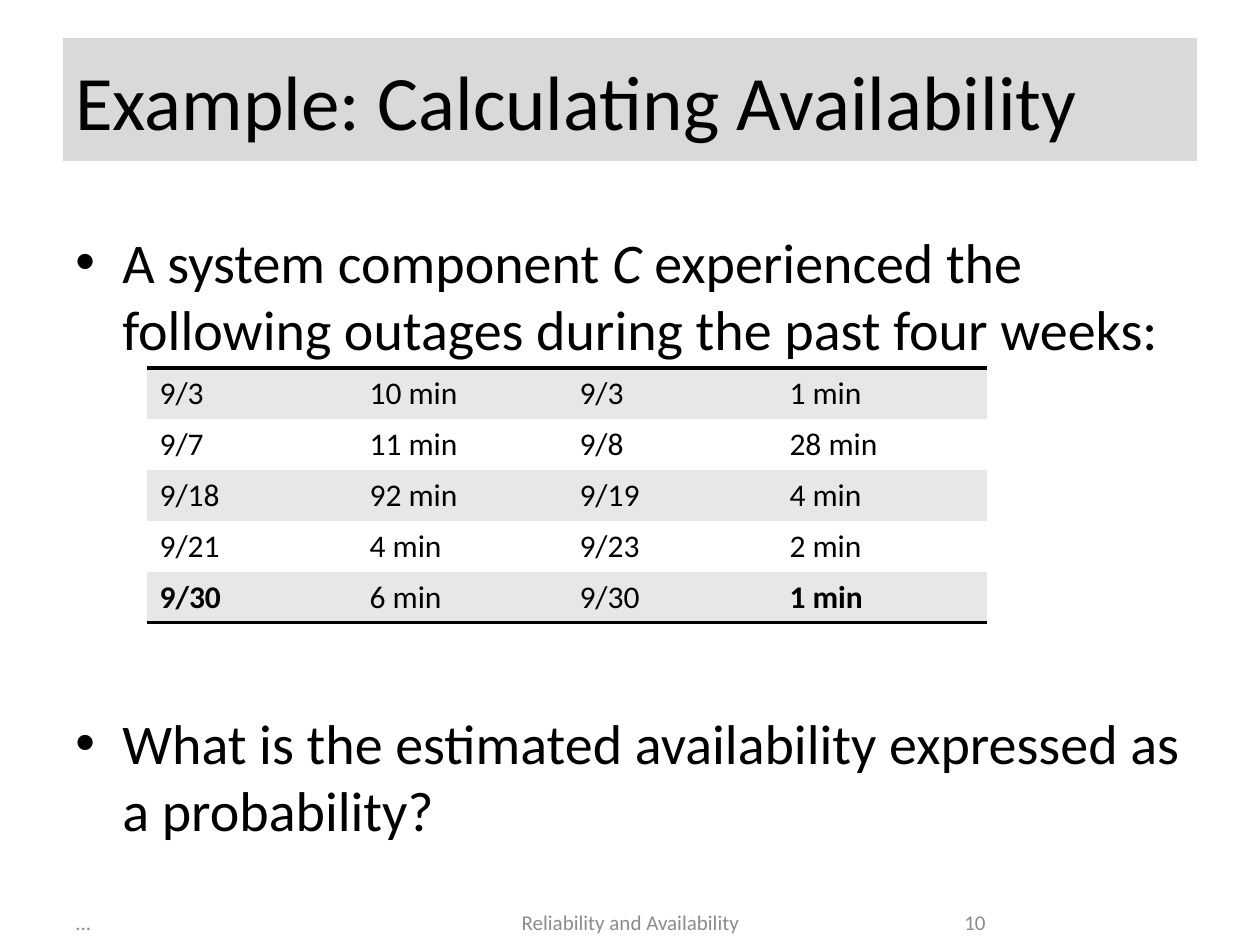
from lxml import etree
from pptx import Presentation
from pptx import util as u
from pptx.dml.color import RGBColor
from pptx.enum import shapes, text
from pptx.oxml import parse_xml
from pptx.oxml.ns import nsdecls, qn

PX = 914400 / 126
COLORS = {"ink": "000000", "title": "D9D9D9", "footer": "8C8C8C",
          "band": "E7E7E7", "plain": "FFFFFF"}
NO_STYLE = "{2D5ABB26-0587-4C30-8999-92F81FD0307C}"


def px(*lengths):
    return [u.Emu(round(n * PX)) for n in lengths]


def add_run(p, words, size, color="ink", **styles):
    r = p.add_run()
    r.text = words
    r.font.color.rgb = RGBColor.from_string(COLORS[color])
    formats = {"name": "Calibri", "size": u.Pt(size), **styles}
    for key, value in formats.items():
        setattr(r.font, key, value)


prs = Presentation()
prs.slide_width, prs.slide_height = px(1260, 945)
s = prs.slides.add_slide(prs.slide_layouts[6])

# Title bar
sp = s.shapes.add_shape(shapes.MSO_SHAPE.RECTANGLE, *px(63, 38, 1134, 123))
sp.shadow.inherit = False
sp.fill.solid()
sp.fill.fore_color.rgb = RGBColor.from_string(COLORS["title"])
sp.line.fill.background()
tf = sp.text_frame
tf.word_wrap = True
tf.vertical_anchor = text.MSO_ANCHOR.MIDDLE
p = tf.paragraphs[0]
p.alignment = text.PP_ALIGN.LEFT
add_run(p, "Example: Calculating Availability", 44)

# Bullets, with room for the table between them
bullets = [
    (0, [("A system component ", False), ("C", True),
         (" experienced the following outages during the past four weeks:", False)]),
    (198, [("What is the estimated availability expressed as a probability?", False)]),
]
tf = s.shapes.add_textbox(*px(63, 221, 1134, 624)).text_frame
tf.word_wrap = True
indent = px(47)[0]
for i, (space, runs) in enumerate(bullets):
    p = tf.add_paragraph() if i else tf.paragraphs[0]
    pPr = p._p.get_or_add_pPr()
    pPr.set("marL", str(indent))
    pPr.set("indent", str(-indent))
    etree.SubElement(pPr, qn("a:buFont")).set("typeface", "Arial")
    etree.SubElement(pPr, qn("a:buChar")).set("char", "•")
    p.space_before = u.Pt(space)
    for words, italic in runs:
        add_run(p, words, 32, italic=italic)

# Footer
footers = [
    (63, 294, text.PP_ALIGN.LEFT, "..."),
    (431, 399, text.PP_ALIGN.CENTER, "Reliability and Availability"),
    (903, 95, text.PP_ALIGN.RIGHT, "10"),
]
for left, width, align, words in footers:
    tf = s.shapes.add_textbox(*px(left, 903, width, 39)).text_frame
    tf.word_wrap = True
    tf.vertical_anchor = text.MSO_ANCHOR.MIDDLE
    p = tf.paragraphs[0]
    p.alignment = align
    add_run(p, words, 12, "footer")

# Outage table
outages = [
    ["9/3", "10 min", "9/3", "1 min"],
    ["9/7", "11 min", "9/8", "28 min"],
    ["9/18", "92 min", "9/19", "4 min"],
    ["9/21", "4 min", "9/23", "2 min"],
    ["9/30", "6 min", "9/30", "1 min"],
]
rows, cols = len(outages), len(outages[0])
last = rows - 1
bold_cells = {(last, 0), (last, cols - 1)}
rules = {0: "lnT", last: "lnB"}
table = s.shapes.add_table(rows, cols, *px(147, 368, 210 * cols, 51 * rows)).table
table.first_row = table.horz_banding = False
table._tbl.tblPr.find(qn("a:tableStyleId")).text = NO_STYLE
for i, row in enumerate(outages):
    for j, words in enumerate(row):
        cell = table.cell(i, j)
        cell.fill.solid()
        fill = COLORS["plain" if i % 2 else "band"]
        cell.fill.fore_color.rgb = RGBColor.from_string(fill)
        add_run(cell.text_frame.paragraphs[0], words, 18, bold=(i, j) in bold_cells)
        if i in rules:
            cell._tc.get_or_add_tcPr().insert(0, parse_xml(
                f'<a:{rules[i]} {nsdecls("a")} w="{u.Pt(2)}"><a:solidFill>'
                f'<a:srgbClr val="{COLORS["ink"]}"/></a:solidFill></a:{rules[i]}>'))

prs.save("out.pptx")
